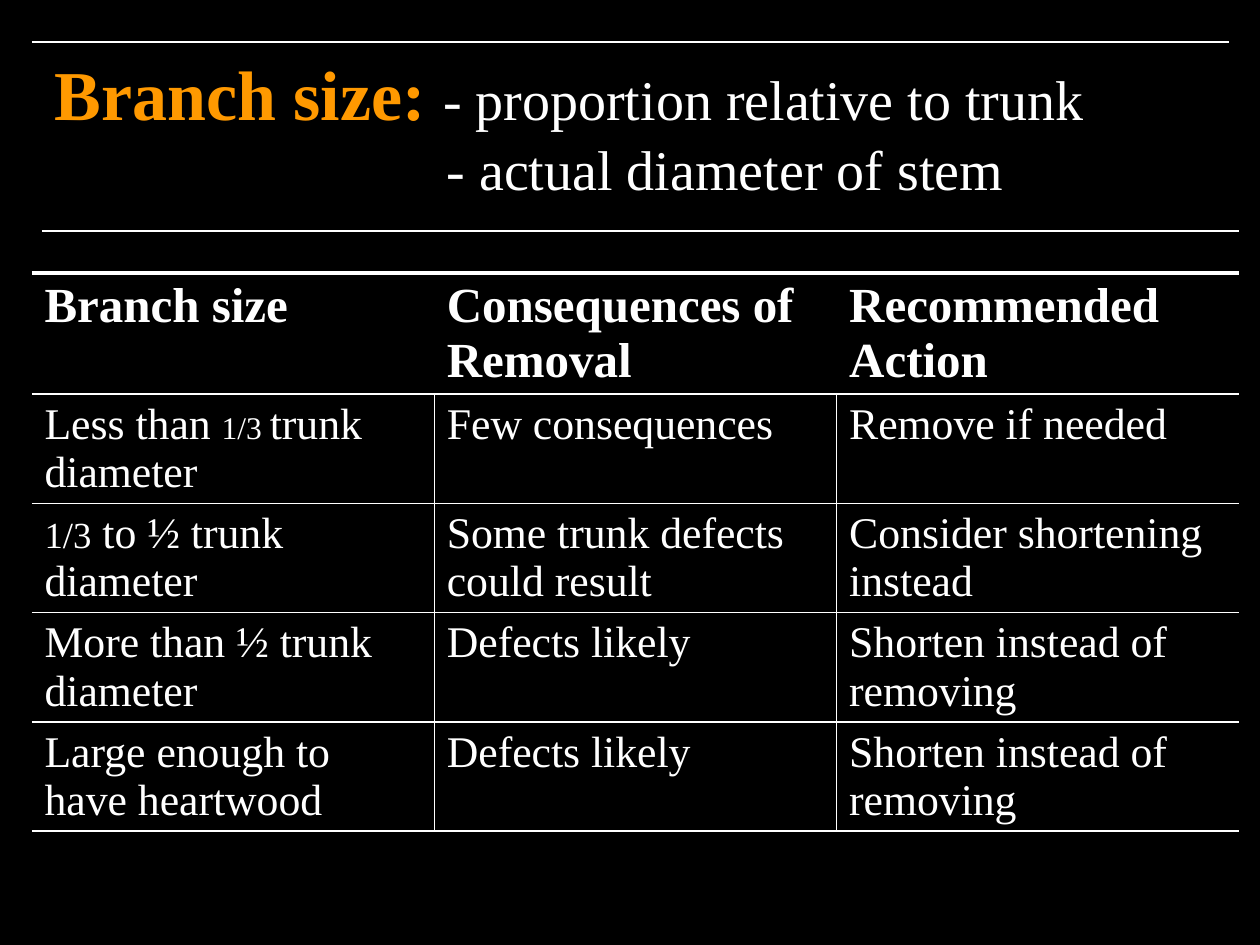
from lxml import etree
from pptx import Presentation
from pptx.dml.color import RGBColor
from pptx.enum.shapes import MSO_CONNECTOR
from pptx.enum.text import MSO_ANCHOR, MSO_AUTO_SIZE, PP_ALIGN
from pptx.oxml.ns import qn
from pptx.util import Pt

LEFT, MIDDLE, NO_FIT = PP_ALIGN.LEFT, MSO_ANCHOR.MIDDLE, MSO_AUTO_SIZE.NONE
STRAIGHT = MSO_CONNECTOR.STRAIGHT

BLACK = RGBColor(0x00, 0x00, 0x00)
WHITE = RGBColor(0xFF, 0xFF, 0xFF)
ORANGE = RGBColor(0xFF, 0x99, 0x00)
FONT = "Times New Roman"
PX = 914400 / 126


def px(n):
    return round(n * PX)


def style(r, size, color=WHITE, bold=False):
    r.font.name = FONT
    r.font.size = Pt(size)
    r.font.bold = bold
    r.font.color.rgb = color


prs = Presentation()
prs.slide_width, prs.slide_height = px(1260), px(945)
s = prs.slides.add_slide(prs.slide_layouts[5])
s.background.fill.solid()
s.background.fill.fore_color.rgb = BLACK

# Title: the second line is indented to sit under the first dash
title = s.shapes.title
title.left, title.top, title.width, title.height = px(42), px(32), px(1187), px(189)
tf = title.text_frame
tf.word_wrap = True
tf.auto_size = NO_FIT
tf.vertical_anchor = MIDDLE
tf.text = "Branch size: \n- actual diameter of stem"
first, second = tf.paragraphs
first.add_run().text = "- proportion relative to trunk"
second._p.get_or_add_pPr().set("marL", str(px(392)))
for p in tf.paragraphs:
    p.alignment = LEFT
    for r in p.runs:
        style(r, 32)
style(first.runs[0], 40, ORANGE, True)

# Table
ROWS = [
    ["Branch size", "Consequences of Removal", "Recommended Action"],
    ["Less than 1/3 trunk diameter", "Few consequences", "Remove if needed"],
    ["1/3 to ½ trunk diameter", "Some trunk defects could result",
     "Consider shortening instead"],
    ["More than ½ trunk diameter", "Defects likely", "Shorten instead of removing"],
    ["Large enough to have heartwood", "Defects likely", "Shorten instead of removing"],
]
SMALL = {1: ("1/3 ", 18), 2: ("1/3", 21)}  # smaller fractions by row
RULES = [2.25, 1.5, 1, 1, 1, 1.5]  # horizontal line widths, top to bottom
HEIGHTS = [121, 109, 109, 109, 109]
last = len(ROWS[0]) - 1

table = s.shapes.add_table(len(ROWS), last + 1, px(32), px(273),
                           px(1207), px(sum(HEIGHTS))).table
table.first_row = table.horz_banding = False

for i, row in enumerate(ROWS):
    table.rows[i].height = px(HEIGHTS[i])
    for j, text in enumerate(row):
        cell = table.cell(i, j)
        p = cell.text_frame.paragraphs[0]
        small, small_size = SMALL.get(i, ("", 0))
        parts = text.partition(small) if small else [text]
        for part in filter(None, parts):
            r = p.add_run()
            r.text = part
            size = small_size if part == small else 25
            style(r, 28 if i == 0 else size, bold=i == 0)

        # Borders: no outer sides, no verticals in the header
        borders = {
            "a:lnL": 1 if i and j else 0,
            "a:lnR": 1 if i and j < last else 0,
            "a:lnT": RULES[i],
            "a:lnB": RULES[i + 1],
        }
        tcPr = cell._tc.get_or_add_tcPr()
        for tag, width in borders.items():
            ln = etree.SubElement(tcPr, qn(tag), w=str(Pt(width)))
            if width:
                fill = etree.SubElement(ln, qn("a:solidFill"))
                etree.SubElement(fill, qn("a:srgbClr"), val=str(WHITE))
            else:
                etree.SubElement(ln, qn("a:noFill"))
        cell.fill.background()

# Lines above and below the title
for x, y in [(32, 42), (42, 231)]:
    line = s.shapes.add_connector(STRAIGHT, px(x), px(y), px(x + 1197), px(y))
    line.line.color.rgb = WHITE
    line.line.width = Pt(1.25)
    etree.SubElement(line._element.spPr, qn("a:effectLst"))

prs.save("out.pptx")
